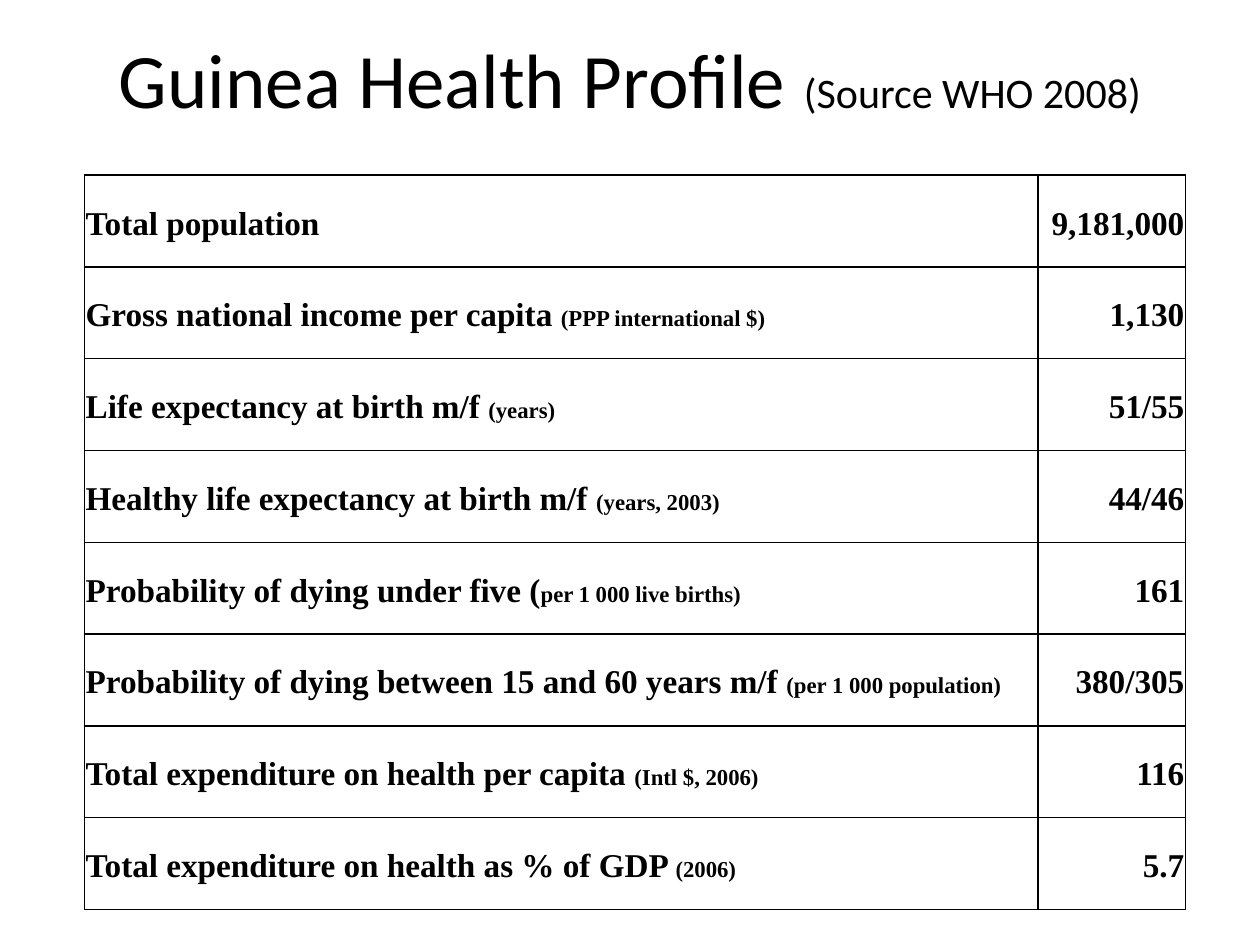
import lxml.etree
import pptx
import pptx.dml.color
import pptx.enum.text
import pptx.oxml.ns
import pptx.util

Pt = pptx.util.Pt
ALIGN = pptx.enum.text.PP_ALIGN
MIDDLE = pptx.enum.text.MSO_ANCHOR.MIDDLE

COLORS = {"text": "000000", "border": "000000"}
TITLE_FONT, TABLE_FONT = "Calibri", "Times New Roman"
TITLE_RUNS = [("Guinea Health Profile ", 44), ("(Source WHO 2008)", 24)]
INDICATORS = [
    ("Total population", "", "9,181,000"),
    ("Gross national income per capita ", "(PPP international $)", "1,130"),
    ("Life expectancy at birth m/f ", "(years)", "51/55"),
    ("Healthy life expectancy at birth m/f ", "(years, 2003)", "44/46"),
    ("Probability of dying under five (", "per 1 000 live births)", "161"),
    ("Probability of dying between 15 and 60 years m/f ", "(per 1 000 population)", "380/305"),
    ("Total expenditure on health per capita ", "(Intl $, 2006)", "116"),
    ("Total expenditure on health as % of GDP ", "(2006)", "5.7"),
]
LABEL_SIZE, UNIT_SIZE = 19, 13
TABLE_LEFT, TABLE_TOP = 48.24, 100.08
COLUMN_WIDTHS = [545, 84.24]
ROW_HEIGHT = 52.45
CELL_MARGIN = 0.72
BORDER_WIDTH = 1


def add_runs(paragraph, runs, font_name, bold):
    for text, size in runs:
        run = paragraph.add_run()
        run.text = text
        run.font.name = font_name
        run.font.size = Pt(size)
        run.font.bold = bold
        run.font.color.rgb = pptx.dml.color.RGBColor.from_string(COLORS["text"])


def add_borders(cell):
    qn = pptx.oxml.ns.qn
    properties = cell._tc.get_or_add_tcPr()
    for side in ("a:lnL", "a:lnR", "a:lnT", "a:lnB"):
        line = lxml.etree.SubElement(properties, qn(side), w=str(Pt(BORDER_WIDTH)))
        fill = lxml.etree.SubElement(line, qn("a:solidFill"))
        lxml.etree.SubElement(fill, qn("a:srgbClr"), val=COLORS["border"])


def fill_cell(cell, runs, alignment):
    add_borders(cell)
    cell.fill.background()
    cell.vertical_anchor = MIDDLE
    cell.margin_left = cell.margin_right = Pt(CELL_MARGIN)
    cell.margin_top = cell.margin_bottom = Pt(CELL_MARGIN)
    paragraph = cell.text_frame.paragraphs[0]
    paragraph.alignment = alignment
    paragraph.line_spacing = 1.15
    add_runs(paragraph, runs, TABLE_FONT, True)


def add_title(slide):
    title = slide.shapes.title
    title.left, title.top, title.width, title.height = Pt(36), Pt(-0.72), Pt(648), Pt(90)
    title.text_frame.vertical_anchor = MIDDLE
    paragraph = title.text_frame.paragraphs[0]
    paragraph.alignment = ALIGN.CENTER
    add_runs(paragraph, TITLE_RUNS, TITLE_FONT, False)


def add_indicator_table(slide):
    table = slide.shapes.add_table(
        len(INDICATORS), len(COLUMN_WIDTHS), Pt(TABLE_LEFT), Pt(TABLE_TOP),
        Pt(sum(COLUMN_WIDTHS)), Pt(ROW_HEIGHT * len(INDICATORS)),
    ).table
    table.first_row = table.horz_banding = False
    for column, width in zip(table.columns, COLUMN_WIDTHS):
        column.width = Pt(width)
    for row, (label, unit, value) in zip(table.rows, INDICATORS):
        row.height = Pt(ROW_HEIGHT)
        label_runs = [(label, LABEL_SIZE)] + ([(unit, UNIT_SIZE)] if unit else [])
        fill_cell(row.cells[0], label_runs, ALIGN.LEFT)
        fill_cell(row.cells[1], [(value, LABEL_SIZE)], ALIGN.RIGHT)


def main():
    """Build the Guinea health profile slide."""
    presentation = pptx.Presentation()
    presentation.slide_width, presentation.slide_height = Pt(720), Pt(540)
    slide = presentation.slides.add_slide(presentation.slide_layouts[5])
    add_title(slide)
    add_indicator_table(slide)
    presentation.save("out.pptx")


if __name__ == "__main__":
    main()
